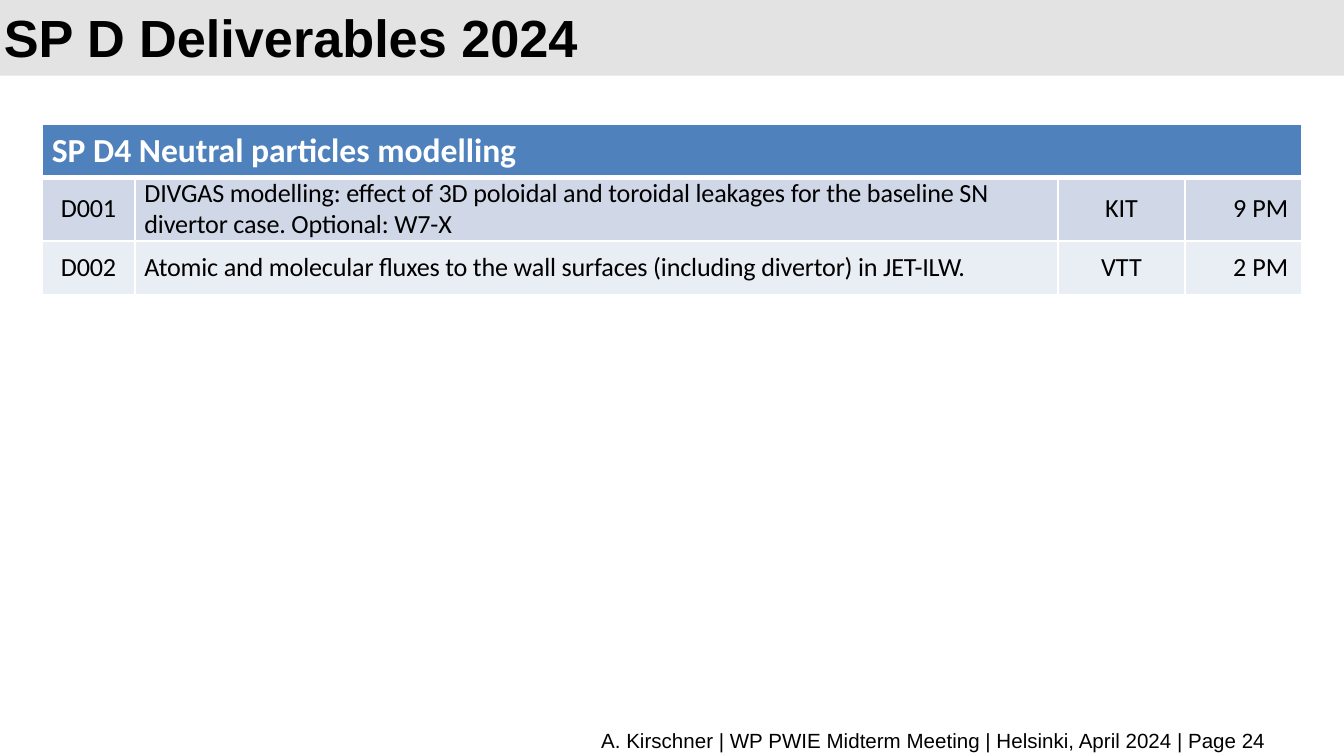
from dataclasses import dataclass

import pptx
import pptx.dml.color
import pptx.enum.shapes
import pptx.enum.text
import pptx.oxml.ns
import pptx.util
from lxml import etree
from pptx.util import Cm

Align = pptx.enum.text.PP_ALIGN
Anchor = pptx.enum.text.MSO_ANCHOR


@dataclass(frozen=True)
class Theme:
    heading_font: str = "Arial"
    table_font: str = "Calibri"
    black: str = "000000"
    white: str = "FFFFFF"
    band: str = "E3E3E3"
    header: str = "4F81BD"
    stripes: tuple = ("D0D8E8", "E9EDF4")
    title_size: int = 28
    header_size: int = 18
    cell_size: int = 14
    footer_size: int = 11


THEME = Theme()
COLUMN_WIDTHS = (1.75, 17.45, 2.39, 2.21)
ROW_HEIGHTS = (1, 1.2, 1.02)
COLUMN_ALIGNS = (Align.CENTER, Align.LEFT, Align.CENTER, Align.RIGHT)
TABLE_HEADING = "SP D4 Neutral particles modelling"
DELIVERABLES = (
    ("D001", "DIVGAS modelling: effect of 3D poloidal and toroidal leakages "
             "for the baseline SN divertor case. Optional: W7-X", "KIT", "9 PM"),
    ("D002", "Atomic and molecular fluxes to the wall surfaces "
             "(including divertor) in JET-ILW.", "VTT", "2 PM"),
)


def rgb(value):
    return pptx.dml.color.RGBColor.from_string(value)


def write(frame, text, font, size, color, bold=False, align=Align.LEFT):
    frame.text = text
    frame.word_wrap = True
    para = frame.paragraphs[0]
    para.alignment = align
    span = para.runs[0]
    span.font.name = font
    span.font.size = pptx.util.Pt(size)
    span.font.bold = bold
    span.font.color.rgb = rgb(color)
    return para


def add_title(page, text):
    title = page.shapes.title
    title.left, title.top, title.width, title.height = Cm(-0.18), Cm(0.23), Cm(20.96), Cm(0.97)
    para = write(title.text_frame, text, THEME.heading_font, THEME.title_size, THEME.black, bold=True)
    para.line_spacing = pptx.util.Pt(32)
    title.text_frame.auto_size = pptx.enum.text.MSO_AUTO_SIZE.NONE
    title.text_frame.vertical_anchor = Anchor.MIDDLE
    title.text_frame.margin_top = title.text_frame.margin_bottom = 0


def add_title_band(page, width):
    band = page.shapes.add_shape(pptx.enum.shapes.MSO_SHAPE.RECTANGLE, 0, 0, width, Cm(1.43))
    band.shadow.inherit = False
    band.fill.solid()
    band.fill.fore_color.rgb = rgb(THEME.band)
    band.line.fill.background()
    page.shapes.title.element.addprevious(band.element)


def add_footer(page, text):
    box = page.shapes.add_textbox(Cm(1.3), Cm(13.64), Cm(22.88), Cm(0.56))
    write(box.text_frame, text, THEME.heading_font, THEME.footer_size, THEME.black, align=Align.RIGHT)


def set_borders(cell, bottom_points=1):
    qn = pptx.oxml.ns.qn
    properties = cell._tc.get_or_add_tcPr()
    for index, side in enumerate(("lnL", "lnR", "lnT", "lnB")):
        points = bottom_points if side == "lnB" else 1
        line = etree.Element(qn(f"a:{side}"), w=str(pptx.util.Pt(points)))
        fill = etree.SubElement(line, qn("a:solidFill"))
        etree.SubElement(fill, qn("a:srgbClr"), val=THEME.white)
        properties.insert(index, line)


def style_cell(cell, fill, bottom_points=1, tight=True):
    cell.fill.solid()
    cell.fill.fore_color.rgb = rgb(fill)
    cell.vertical_anchor = Anchor.MIDDLE
    if tight:
        cell.margin_left = cell.margin_right = Cm(0.18)
        cell.margin_top = cell.margin_bottom = 0
    set_borders(cell, bottom_points)


def add_deliverables(page):
    frame = page.shapes.add_table(len(ROW_HEIGHTS), len(COLUMN_WIDTHS), Cm(0.8), Cm(2.35),
                                  Cm(sum(COLUMN_WIDTHS)), Cm(sum(ROW_HEIGHTS)))
    table = frame.table
    for column, width in zip(table.columns, COLUMN_WIDTHS):
        column.width = Cm(width)
    for row, height in zip(table.rows, ROW_HEIGHTS):
        row.height = Cm(height)

    for cell in table.rows[0].cells:
        style_cell(cell, THEME.header, bottom_points=3)
    heading = table.cell(0, 0)
    heading.merge(table.cell(0, len(COLUMN_WIDTHS) - 1))
    write(heading.text_frame, TABLE_HEADING, THEME.table_font, THEME.header_size, THEME.white, bold=True)

    for row_index, (values, fill) in enumerate(zip(DELIVERABLES, THEME.stripes), start=1):
        for column_index, (value, align) in enumerate(zip(values, COLUMN_ALIGNS)):
            cell = table.cell(row_index, column_index)
            tight = column_index < 2
            style_cell(cell, fill, tight=tight)
            para = write(cell.text_frame, value, THEME.table_font, THEME.cell_size, THEME.black, align=align)
            if tight:
                para.runs[0].font._element.set("spc", "-10")


def main():
    deck = pptx.Presentation()
    deck.slide_width, deck.slide_height = Cm(25.4), Cm(14.29)
    page = deck.slides.add_slide(deck.slide_layouts[5])
    add_title(page, "SP D Deliverables 2024")
    add_title_band(page, deck.slide_width)
    add_footer(page, "A. Kirschner | WP PWIE Midterm Meeting | Helsinki, April 2024 | Page 24")
    add_deliverables(page)
    deck.save("out.pptx")


if __name__ == "__main__":
    main()
